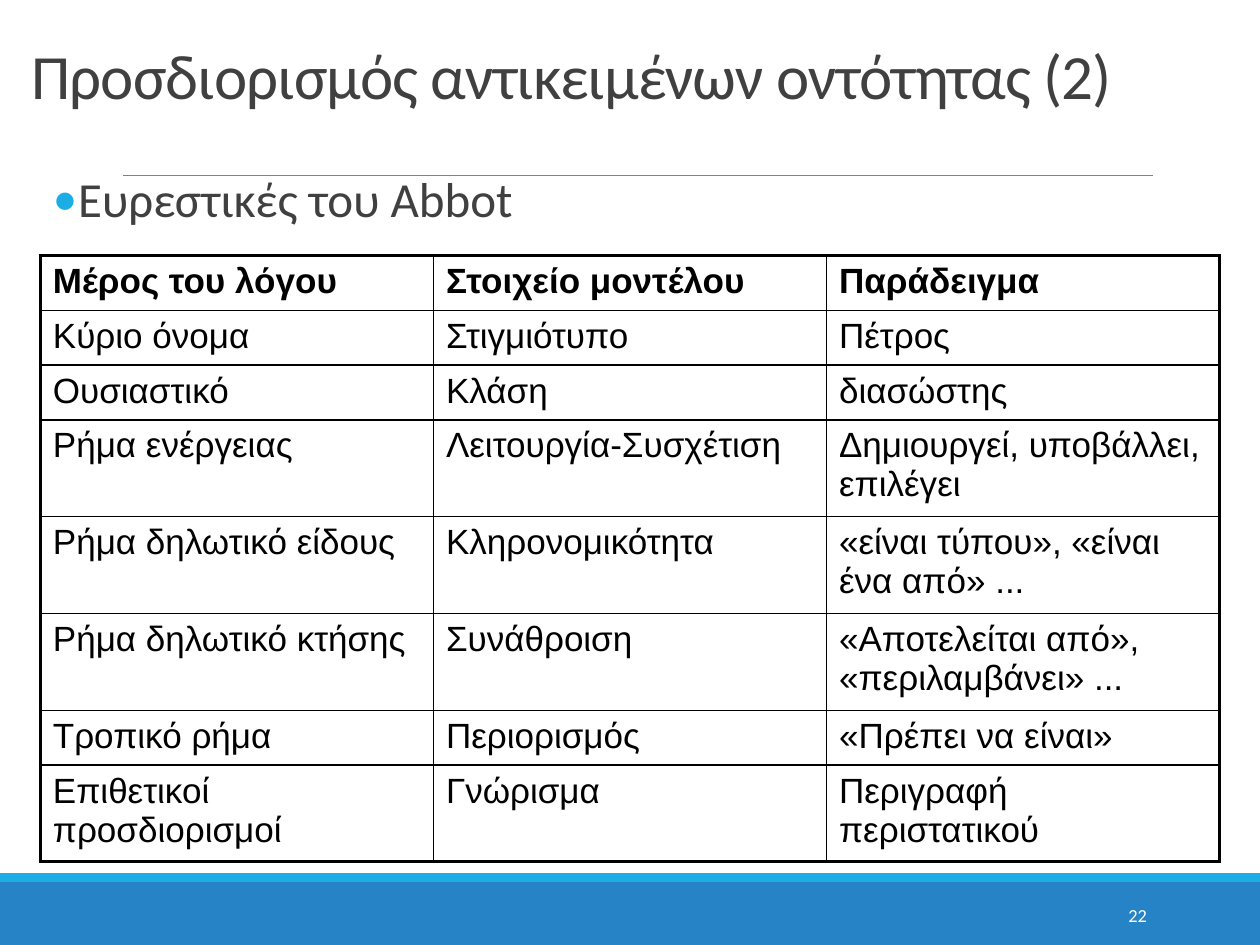
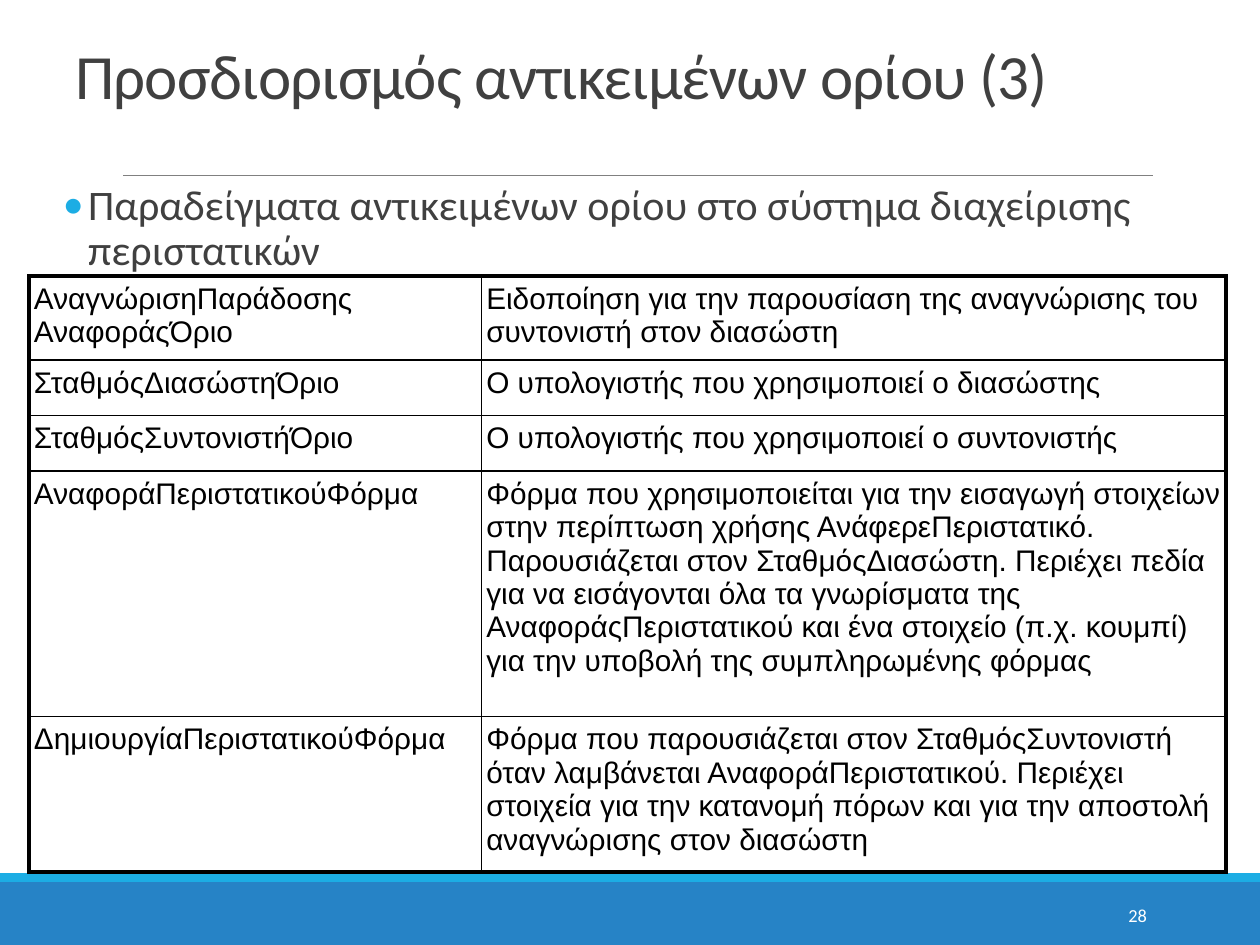
from dataclasses import dataclass
from typing import NamedTuple

from lxml.etree import SubElement
from pptx import Presentation
from pptx.dml.color import RGBColor
from pptx.enum.shapes import MSO_CONNECTOR, MSO_SHAPE
from pptx.enum.text import MSO_ANCHOR, PP_ALIGN
from pptx.oxml import parse_xml
from pptx.oxml.ns import nsdecls, qn
from pptx.util import Emu, Inches, Pt

PAGE_WIDTH, PAGE_HEIGHT = Inches(10), Inches(7.5)
GRID_COLUMNS, GRID_ROWS = 100, 75
BLUE, SKY, GREY, INK, BLACK, WHITE = "2683C6", "1CADE4", "808080", "404040", "000000", "FFFFFF"
HEADING_FONT, TABLE_FONT = "Calibri", "Arial"
OUTER_LINE, INNER_LINE = 2.25, 1
CELL_INSET = 0.5


class Frame(NamedTuple):
    """A place on the page, in grid columns and rows."""
    left: float
    top: float
    width: float
    height: float


class TextStyle(NamedTuple):
    size: float
    color: str = INK
    font: str = HEADING_FONT
    bold: bool = False


@dataclass
class TableSpec:
    left: float
    top: float
    columns: list[float]
    rows: list[float]
    size: float
    side_inset: float
    has_header: bool
    cells: list[tuple[str, ...]]


@dataclass
class PageSpec:
    number: int
    title: str
    title_frame: Frame
    title_inset: float
    bullet: str
    bullet_frame: Frame
    bullet_size: float
    table: TableSpec


BANDS = [(Frame(0, 70, 100, 5), BLUE), (Frame(0, 69.3, 100, 0.7), SKY)]
RULE_LEFT, RULE_RIGHT, RULE_ROW = 9.8, 91.5, 13.9
NUMBER_FRAME = Frame(81.2, 70.6, 10.8, 4)

PAGES = [
    PageSpec(
        22, "Προσδιορισμός αντικειμένων οντότητας (2)", Frame(2.3, 3, 95.5, 6.4), 0.2,
        "Ευρεστικές του Abbot", Frame(4.2, 13.4, 90, 4.7), 28,
        TableSpec(3.2, 20.3, [31.2] * 3, [4.1, 4.1, 4.1, 7.2, 7.7, 7.7, 4.3, 7.2], 20, 1, True, [
            ("Μέρος του λόγου", "Στοιχείο μοντέλου", "Παράδειγμα"),
            ("Κύριο όνομα", "Στιγμιότυπο", "Πέτρος"),
            ("Ουσιαστικό", "Κλάση", "διασώστης"),
            ("Ρήμα ενέργειας", "Λειτουργία-Συσχέτιση", "Δημιουργεί, υποβάλλει, επιλέγει"),
            ("Ρήμα δηλωτικό είδους", "Κληρονομικότητα", "«είναι τύπου», «είναι ένα από» ..."),
            ("Ρήμα δηλωτικό κτήσης", "Συνάθροιση", "«Αποτελείται από», «περιλαμβάνει» ..."),
            ("Τροπικό ρήμα", "Περιορισμός", "«Πρέπει να είναι»"),
            ("Επιθετικοί προσδιορισμοί", "Γνώρισμα", "Περιγραφή περιστατικού"),
        ])),
    PageSpec(
        28, "Προσδιορισμός αντικειμένων ορίου (3)", Frame(5, 3, 90, 6.4), 1,
        "Παραδείγματα αντικειμένων ορίου στο σύστημα διαχείρισης περιστατικών",
        Frame(5, 14.1, 90, 9.2), 24,
        TableSpec(2.3, 21.9, [35.9, 59.1], [6.3, 4.4, 4.4, 19.5, 11.6], 17, 0.4, False, [
            ("ΑναγνώρισηΠαράδοσης\vΑναφοράςΌριο",
             "Ειδοποίηση για την παρουσίαση της αναγνώρισης του συντονιστή στον διασώστη"),
            ("ΣταθμόςΔιασώστηΌριο", "Ο υπολογιστής που χρησιμοποιεί ο διασώστης"),
            ("ΣταθμόςΣυντονιστήΌριο", "Ο υπολογιστής που χρησιμοποιεί ο συντονιστής"),
            ("ΑναφοράΠεριστατικούΦόρμα",
             "Φόρμα που χρησιμοποιείται για την εισαγωγή στοιχείων στην περίπτωση χρήσης "
             "ΑνάφερεΠεριστατικό. Παρουσιάζεται στον ΣταθμόςΔιασώστη. Περιέχει πεδία για να "
             "εισάγονται όλα τα γνωρίσματα της ΑναφοράςΠεριστατικού και ένα στοιχείο "
             "(π.χ. κουμπί) για την υποβολή της συμπληρωμένης φόρμας"),
            ("ΔημιουργίαΠεριστατικούΦόρμα",
             "Φόρμα που παρουσιάζεται στον ΣταθμόςΣυντονιστή όταν λαμβάνεται "
             "ΑναφοράΠεριστατικού. Περιέχει στοιχεία για την κατανομή πόρων και για την "
             "αποστολή αναγνώρισης στον διασώστη"),
        ])),
]


def across(columns: float) -> Emu:
    return Emu(round(PAGE_WIDTH * columns / GRID_COLUMNS))


def down(rows: float) -> Emu:
    return Emu(round(PAGE_HEIGHT * rows / GRID_ROWS))


def place(frame: Frame) -> tuple[Emu, Emu, Emu, Emu]:
    return across(frame.left), down(frame.top), across(frame.width), down(frame.height)


def paint(color_format, color: str) -> None:
    color_format.rgb = RGBColor.from_string(color)


def style_runs(para, style: TextStyle) -> None:
    for span in para.runs:
        span.font.size = Pt(style.size)
        span.font.name = style.font
        span.font.bold = style.bold
        paint(span.font.color, style.color)


def add_text(page, frame: Frame, text: str, style: TextStyle, inset: float, anchor):
    """Add a one-paragraph text box and return its paragraph."""
    text_frame = page.shapes.add_textbox(*place(frame)).text_frame
    text_frame.word_wrap = True
    text_frame.vertical_anchor = anchor
    text_frame.margin_left = text_frame.margin_right = across(inset)
    text_frame.text = text
    para = text_frame.paragraphs[0]
    style_runs(para, style)
    return para


def add_background(page) -> None:
    for frame, color in BANDS:
        band = page.shapes.add_shape(MSO_SHAPE.RECTANGLE, *place(frame))
        band.shadow.inherit = False
        band.fill.solid()
        paint(band.fill.fore_color, color)
        band.line.fill.background()
    rule = page.shapes.add_connector(
        MSO_CONNECTOR.STRAIGHT, across(RULE_LEFT), down(RULE_ROW), across(RULE_RIGHT), down(RULE_ROW))
    rule.line.width = Pt(0.5)
    paint(rule.line.color, GREY)
    SubElement(rule._element.spPr, qn("a:effectLst"))


def add_title(page, spec: PageSpec) -> None:
    para = add_text(page, spec.title_frame, spec.title, TextStyle(36),
                    spec.title_inset, MSO_ANCHOR.BOTTOM)
    para.line_spacing = 0.85
    para.runs[0].font._element.set("spc", "-50")


def add_bullet(page, spec: PageSpec) -> None:
    para = add_text(page, spec.bullet_frame, spec.bullet, TextStyle(spec.bullet_size),
                    0, MSO_ANCHOR.TOP)
    para.line_spacing = 0.9
    para.space_before, para.space_after = Pt(12), Pt(2)
    properties = para._p.get_or_add_pPr()
    properties.set("marL", str(across(2)))
    properties.set("indent", str(-across(2)))
    bullet_color = SubElement(properties, qn("a:buClr"))
    SubElement(bullet_color, qn("a:srgbClr"), val=SKY)
    SubElement(properties, qn("a:buFont"), typeface=HEADING_FONT)
    SubElement(properties, qn("a:buChar"), char="•")


def set_borders(cell, outer_sides: dict[str, bool]) -> None:
    """Draw the four cell borders, heavier on the table's outer sides."""
    properties = cell._tc.get_or_add_tcPr()
    for index, (side, is_outer) in enumerate(outer_sides.items()):
        width = Pt(OUTER_LINE if is_outer else INNER_LINE)
        properties.insert(index, parse_xml(
            f'<a:ln{side} {nsdecls("a")} w="{width}"><a:solidFill>'
            f'<a:srgbClr val="{BLACK}"/></a:solidFill></a:ln{side}>'))


def fill_cell(cell, text: str, style: TextStyle, side_inset: float) -> None:
    cell.fill.background()
    cell.margin_left = cell.margin_right = across(side_inset)
    cell.margin_top = cell.margin_bottom = down(CELL_INSET)
    para = cell.text_frame.paragraphs[0]
    para.text = text
    style_runs(para, style)
    space_before = SubElement(para._p.get_or_add_pPr(), qn("a:spcBef"))
    SubElement(space_before, qn("a:spcPct"), val="20000")


def add_table(page, spec: TableSpec) -> None:
    frame = Frame(spec.left, spec.top, sum(spec.columns), sum(spec.rows))
    table = page.shapes.add_table(len(spec.rows), len(spec.columns), *place(frame)).table
    table.first_row = table.horz_banding = False
    for column, width in zip(table.columns, spec.columns):
        column.width = across(width)
    last_row, last_column = len(spec.rows) - 1, len(spec.columns) - 1
    for row_index, texts in enumerate(spec.cells):
        table.rows[row_index].height = down(spec.rows[row_index])
        style = TextStyle(spec.size, BLACK, TABLE_FONT, spec.has_header and row_index == 0)
        for column_index, text in enumerate(texts):
            cell = table.cell(row_index, column_index)
            fill_cell(cell, text, style, spec.side_inset)
            set_borders(cell, {"L": column_index == 0, "R": column_index == last_column,
                               "T": row_index == 0, "B": row_index == last_row})


def add_page(deck, spec: PageSpec) -> None:
    page = deck.slides.add_slide(deck.slide_layouts[6])
    add_background(page)
    add_title(page, spec)
    add_bullet(page, spec)
    number = add_text(page, NUMBER_FRAME, str(spec.number), TextStyle(10.5, WHITE),
                      1, MSO_ANCHOR.MIDDLE)
    number.alignment = PP_ALIGN.RIGHT
    add_table(page, spec.table)


def main() -> None:
    deck = Presentation()
    deck.slide_width, deck.slide_height = PAGE_WIDTH, PAGE_HEIGHT
    for spec in PAGES:
        add_page(deck, spec)
    deck.save("out.pptx")


if __name__ == "__main__":
    main()
